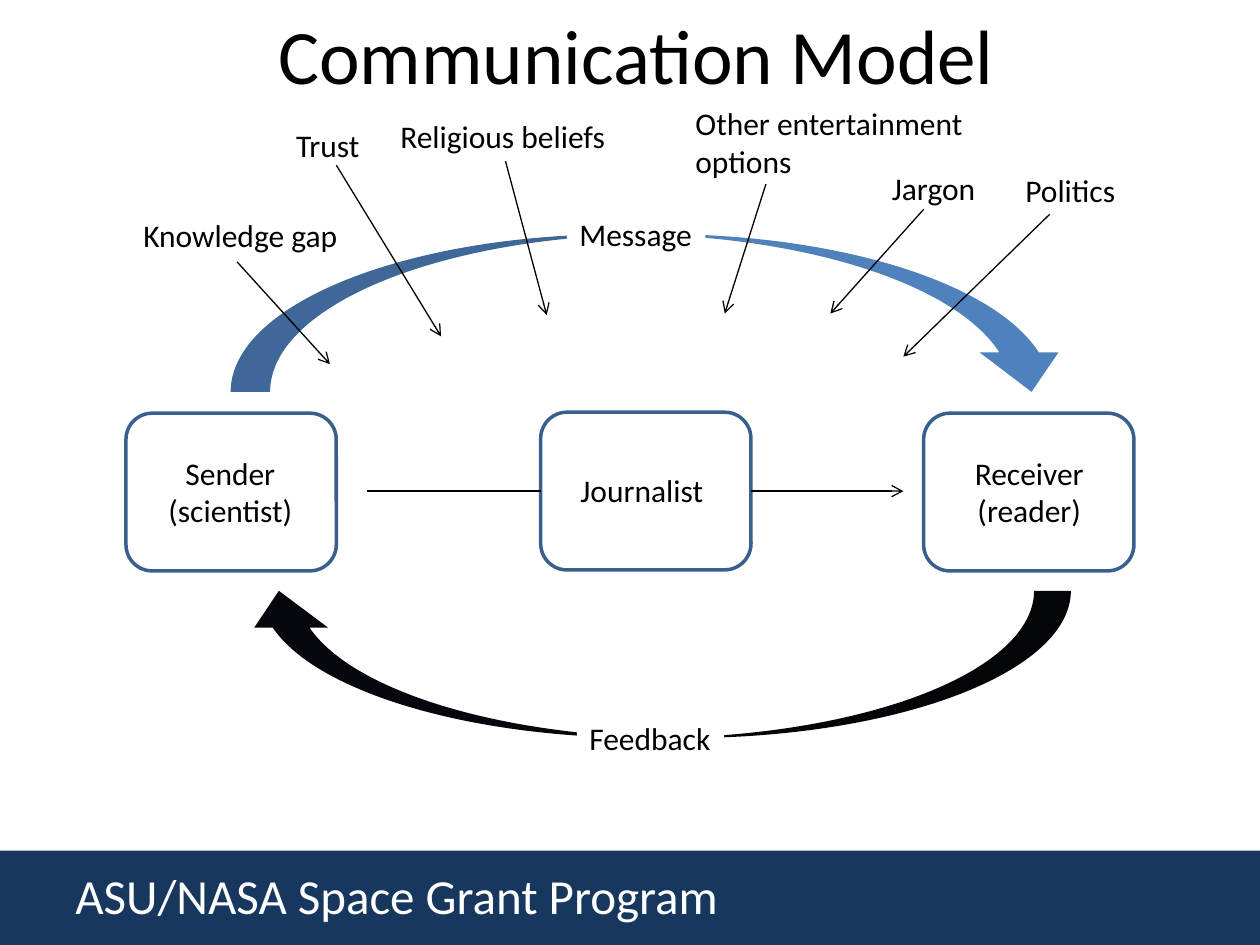
from lxml.etree import SubElement
from pptx import Presentation
from pptx.dml.color import RGBColor
from pptx.enum.shapes import MSO_CONNECTOR, MSO_SHAPE
from pptx.enum.text import MSO_ANCHOR, MSO_AUTO_SIZE, PP_ALIGN
from pptx.oxml.ns import qn
from pptx.util import Cm, Pt

BLACK, WHITE, NAVY = "000000", "FFFFFF", "17375E"
BLUE, OUTLINE, INK = "4F81BD", "3A5F8C", "05070C"
LINE_HEIGHT, PAIR_HEIGHT = 1.02, 1.8
BOX_WIDTH, BOX_HEIGHT = 4.24, 3.18


def colour(value):
    return RGBColor.from_string(value)


class SlideBuilder:
    def __init__(self, slide):
        self.slide = slide
        self.font = {"name": "Calibri", "size": Pt(18), "bold": False}

    def shape(self, kind, position, fill=None, outline=None, flip=False):
        shape = self.slide.shapes.add_shape(kind, *map(Cm, position))
        shape.shadow.inherit = False
        if fill:
            shape.fill.solid()
            shape.fill.fore_color.rgb = colour(fill)
        else:
            shape.fill.background()
        if outline:
            shape.line.color.rgb = colour(outline)
            shape.line.width = Pt(2)
        else:
            shape.line.fill.background()
        if flip:
            shape._element.spPr.find(qn("a:xfrm")).set("flipH", "1")
        return shape

    def text(self, content, position, align=PP_ALIGN.LEFT, text_colour=BLACK,
             fill=None, wrap=False, **font_format):
        box = self.slide.shapes.add_textbox(*map(Cm, position))
        if fill:
            box.fill.solid()
            box.fill.fore_color.rgb = colour(fill)
        frame = box.text_frame
        frame.text = content
        frame.word_wrap = wrap
        frame.auto_size = MSO_AUTO_SIZE.NONE if wrap else MSO_AUTO_SIZE.SHAPE_TO_FIT_TEXT
        frame.vertical_anchor = MSO_ANCHOR.TOP
        for paragraph in frame.paragraphs:
            paragraph.alignment = align
            for name, value in {**self.font, **font_format}.items():
                setattr(paragraph.font, name, value)
            paragraph.font.color.rgb = colour(text_colour)

    def line(self, start, end, arrow=True):
        connector = self.slide.shapes.add_connector(
            MSO_CONNECTOR.STRAIGHT, *map(Cm, (*start, *end)))
        connector.line.color.rgb = colour(BLACK)
        connector.line.width = Pt(0.75)
        if arrow:
            SubElement(connector.line._get_or_add_ln(), qn("a:tailEnd"), type="arrow")
        SubElement(connector._element.spPr, qn("a:effectLst"))
        return connector


def main():
    presentation = Presentation()
    presentation.slide_width, presentation.slide_height = Cm(25.4), Cm(19.05)
    builder = SlideBuilder(presentation.slides.add_slide(presentation.slide_layouts[6]))

    builder.shape(MSO_SHAPE.RECTANGLE, (0, 17.15, 25.4, 1.9), NAVY)
    builder.text("ASU/NASA Space Grant Program", (1.27, 17.32, 13.61, 1.45),
                 text_colour=WHITE, size=Pt(28))
    builder.text("Communication Model", (1.4, 0.03, 22.86, 3.18),
                 PP_ALIGN.CENTER, wrap=True, size=Pt(44))

    builder.shape(MSO_SHAPE.CURVED_DOWN_ARROW, (4.65, 4.72, 16.94, 3.18), BLUE)
    builder.shape(MSO_SHAPE.CURVED_UP_ARROW, (4.88, 11.91, 16.71, 2.97), INK, flip=True)
    builder.text("Message", (11.43, 4.22, 2.79, LINE_HEIGHT), fill=WHITE)
    builder.text("Feedback", (11.63, 14.38, 2.97, LINE_HEIGHT), fill=WHITE)

    people = [
        ("Sender\n(scientist)", (2.54, 8.33), (3.12, 9.02, 3.05, PAIR_HEIGHT)),
        ("Receiver\n(reader)", (18.62, 8.33), (19.38, 9.02, 2.74, PAIR_HEIGHT)),
        ("Journalist", (10.9, 8.31), (11.43, 9.37, 3.02, LINE_HEIGHT)),
    ]
    boxes = {}
    for name, corner, label_position in people:
        boxes[name] = builder.shape(MSO_SHAPE.ROUNDED_RECTANGLE,
                                    (*corner, BOX_WIDTH, BOX_HEIGHT), outline=OUTLINE)
        builder.text(name, label_position, PP_ALIGN.CENTER)

    barriers = [
        ("Knowledge gap", (2.64, 4.24, 4.47, LINE_HEIGHT), (4.78, 5.28), (6.65, 7.34)),
        ("Trust", (5.72, 2.41, 1.8, LINE_HEIGHT), (6.78, 3.33), (8.89, 6.78)),
        ("Religious beliefs", (7.82, 2.24, 4.7, LINE_HEIGHT), (10.19, 3.25), (11.02, 6.35)),
        ("Other entertainment\noptions", (13.77, 1.98, 5.97, PAIR_HEIGHT),
         (15.44, 3.71), (14.61, 6.32)),
        ("Jargon", (17.73, 3.28, 2.21, LINE_HEIGHT), (18.62, 4.22), (16.74, 6.32)),
        ("Politics", (20.42, 3.33, 2.34, LINE_HEIGHT), (21.16, 4.32), (18.21, 7.19)),
    ]
    for name, position, start, end in barriers:
        builder.line(start, end)
        builder.text(name, position)

    journalist = boxes["Journalist"]
    incoming = builder.line((7.39, 9.9), (10.9, 9.9), arrow=False)
    incoming.end_connect(journalist, 1)
    outgoing = builder.line((15.14, 9.9), (18.21, 9.9))
    outgoing.begin_connect(journalist, 3)

    presentation.save("out.pptx")


if __name__ == "__main__":
    main()
